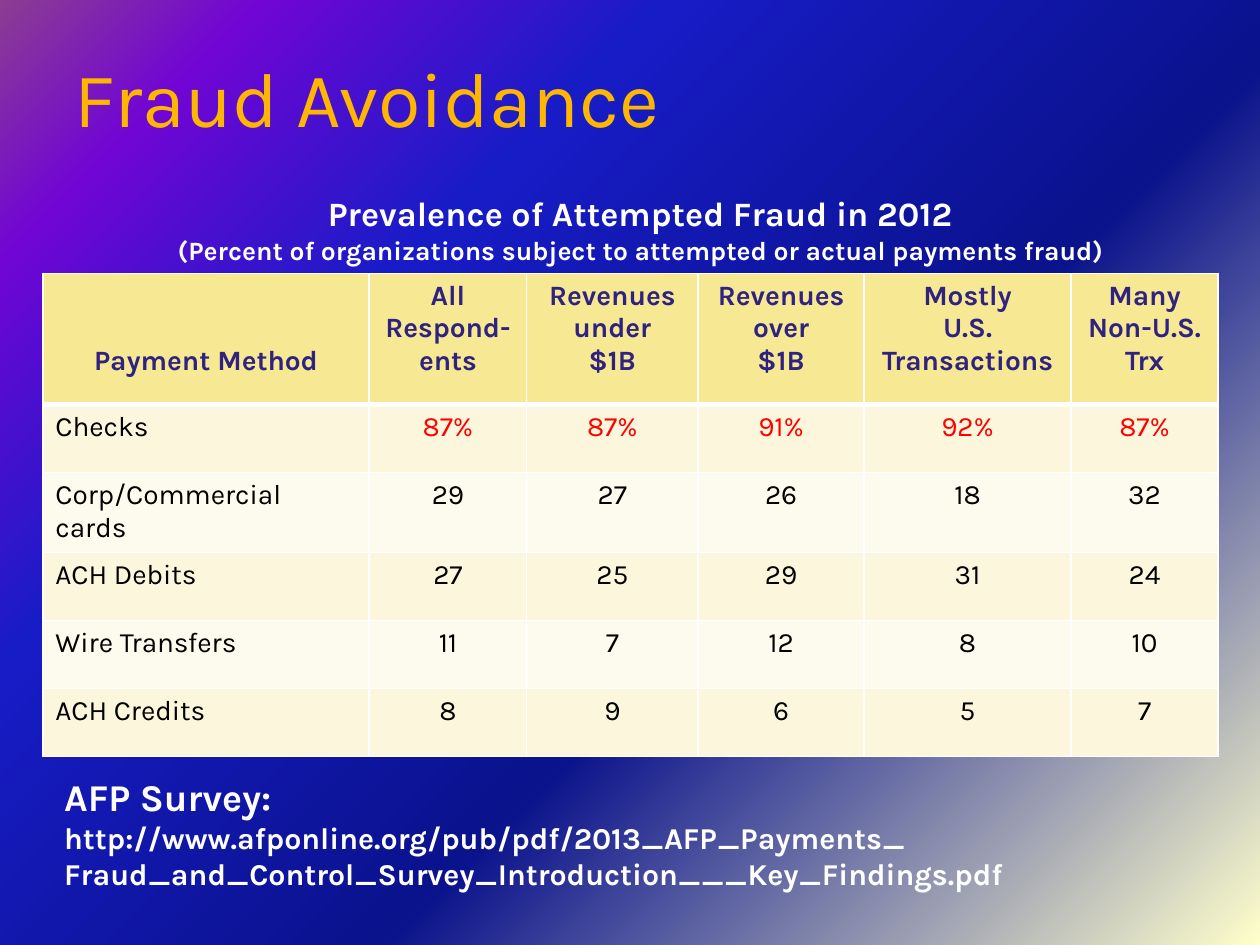
from dataclasses import dataclass

from pptx import Presentation
from pptx.dml.color import RGBColor
from pptx.enum.text import MSO_ANCHOR as Anchor, PP_ALIGN as Align
from pptx.oxml import parse_xml
from pptx.oxml.ns import nsdecls, qn
from pptx.slide import Slide
from pptx.table import _Cell as Cell
from pptx.util import Pt

FONT = "Karla"
WHITE = RGBColor(0xFF, 0xFF, 0xFF)
BLACK = RGBColor(0x00, 0x00, 0x00)
RED = RGBColor(0xFF, 0x00, 0x00)
GOLD = RGBColor(0xFF, 0xB6, 0x01)
INDIGO = RGBColor(0x30, 0x23, 0x7F)
HEADER_FILL = RGBColor(0xF7, 0xE9, 0x93)
BAND_FILLS = (RGBColor(0xFC, 0xF7, 0xDC), RGBColor(0xFD, 0xFB, 0xEE))
BACKDROP = (
    (0, RGBColor(0xFF, 0xFF, 0xCC)),
    (40, RGBColor(0x0A, 0x12, 0x8C)),
    (70, RGBColor(0x18, 0x1C, 0xC7)),
    (88, RGBColor(0x70, 0x05, 0xD4)),
    (100, RGBColor(0x8C, 0x3D, 0x91)),
)

COLUMN_WIDTHS = (186.5, 90, 97.9, 95, 118.1, 84.2)
HEADER_HEIGHT, ROW_HEIGHT = 74.9, 38.9
HEADERS = (
    "Payment Method",
    "All Respond-ents",
    "Revenues under\n$1B",
    "Revenues over\n$1B",
    "Mostly\nU.S.\nTransactions",
    "Many\nNon-U.S.\nTrx",
)


@dataclass(frozen=True)
class Method:
    name: str
    shares: tuple[int, ...]
    color: RGBColor = BLACK
    unit: str = ""


METHODS = (
    Method("Checks", (87, 87, 91, 92, 87), RED, "%"),
    Method("Corp/Commercial cards", (29, 27, 26, 18, 32)),
    Method("ACH Debits", (27, 25, 29, 31, 24)),
    Method("Wire Transfers", (11, 7, 12, 8, 10)),
    Method("ACH Credits", (8, 9, 6, 5, 7)),
)


@dataclass(frozen=True)
class Caption:
    left: float
    top: float
    width: float
    height: float
    text: str
    sizes: tuple[float, ...]
    color: RGBColor = WHITE
    bold: bool = True
    align: Align = Align.LEFT
    line_spacing: float = 1.0


CAPTIONS = (
    Caption(36, 31, 648, 87.8, "Fraud Avoidance", (44.3,), GOLD, False, line_spacing=0.9),
    Caption(
        30.2, 438.5, 630, 74.9,
        "AFP Survey:\vhttp://www.afponline.org/pub/pdf/2013_AFP_Payments_\n"
        "Fraud_and_Control_Survey_Introduction___Key_Findings.pdf",
        (21.6, 17.3, 17.3),
    ),
    Caption(
        36, 106.6, 660.2, 49,
        "Prevalence of Attempted Fraud in 2012\n"
        "(Percent of organizations subject to attempted or actual payments fraud)",
        (19.5, 15.1), align=Align.CENTER,
    ),
)


def paint_background(slide: Slide) -> None:
    stops = "".join(
        f'<a:gs pos="{percent * 1000}"><a:srgbClr val="{color}"/></a:gs>'
        for percent, color in BACKDROP
    )
    background = parse_xml(
        f'<p:bg {nsdecls("p", "a")}><p:bgPr><a:gradFill rotWithShape="1">'
        f'<a:gsLst>{stops}</a:gsLst><a:path path="circle">'
        '<a:fillToRect l="100000" t="100000"/></a:path></a:gradFill>'
        "<a:effectLst/></p:bgPr></p:bg>"
    )
    slide.element.find(qn("p:cSld")).insert(0, background)


def add_caption(slide: Slide, caption: Caption) -> None:
    box = slide.shapes.add_textbox(
        Pt(caption.left), Pt(caption.top), Pt(caption.width), Pt(caption.height)
    )
    frame = box.text_frame
    frame.word_wrap = True
    frame.margin_left = frame.margin_right = Pt(6.5)
    frame.margin_top = frame.margin_bottom = Pt(3.6)
    frame.text = caption.text
    runs = []
    for paragraph in frame.paragraphs:
        paragraph.alignment = caption.align
        paragraph.line_spacing = caption.line_spacing
        runs.extend(paragraph.runs)
    for run, size in zip(runs, caption.sizes):
        run.font.name = FONT
        run.font.size = Pt(size)
        run.font.bold = caption.bold
        run.font.color.rgb = caption.color


def set_borders(cell: Cell, top: float, bottom: float) -> None:
    properties = cell._tc.get_or_add_tcPr()
    sides = (("lnL", 1), ("lnR", 1), ("lnT", top), ("lnB", bottom))
    for position, (side, width) in enumerate(sides):
        border = parse_xml(
            f'<a:{side} {nsdecls("a")} w="{Pt(width)}"><a:solidFill>'
            f'<a:srgbClr val="{WHITE}"/></a:solidFill></a:{side}>'
        )
        properties.insert(position, border)


def fill_cell(cell: Cell, text: str, fill: RGBColor, color: RGBColor,
              align: Align, bold: bool = False) -> None:
    cell.fill.solid()
    cell.fill.fore_color.rgb = fill
    cell.text_frame.text = text
    for paragraph in cell.text_frame.paragraphs:
        paragraph.alignment = align
        for run in paragraph.runs:
            run.font.name = FONT
            run.font.size = Pt(16)
            run.font.bold = bold
            run.font.color.rgb = color


def add_fraud_table(slide: Slide) -> None:
    table = slide.shapes.add_table(
        len(METHODS) + 1, len(HEADERS), Pt(24.5), Pt(156.2),
        Pt(sum(COLUMN_WIDTHS)), Pt(HEADER_HEIGHT + ROW_HEIGHT * len(METHODS)),
    ).table
    for column, width in zip(table.columns, COLUMN_WIDTHS):
        column.width = Pt(width)
    for row in table.rows:
        row.height = Pt(ROW_HEIGHT)
    table.rows[0].height = Pt(HEADER_HEIGHT)

    for column, header in enumerate(HEADERS):
        cell = table.cell(0, column)
        fill_cell(cell, header, HEADER_FILL, INDIGO, Align.CENTER, True)
        set_borders(cell, 1, 3)
    payment_method = table.cell(0, 0)
    payment_method.vertical_anchor = Anchor.BOTTOM
    payment_method.margin_bottom = Pt(15.2)

    for row, method in enumerate(METHODS, 1):
        fill = BAND_FILLS[(row - 1) % 2]
        fill_cell(table.cell(row, 0), method.name, fill, BLACK, Align.LEFT)
        for column, share in enumerate(method.shares, 1):
            fill_cell(table.cell(row, column), f"{share}{method.unit}", fill,
                      method.color, Align.CENTER)
        for cell in table.rows[row].cells:
            set_borders(cell, 3 if row == 1 else 1, 1)


def main() -> None:
    deck = Presentation()
    deck.slide_width, deck.slide_height = Pt(720), Pt(540)
    slide = deck.slides.add_slide(deck.slide_layouts[6])
    paint_background(slide)
    title, source, heading = CAPTIONS
    add_caption(slide, title)
    add_caption(slide, source)
    add_fraud_table(slide)
    add_caption(slide, heading)
    deck.save("out.pptx")


if __name__ == "__main__":
    main()
